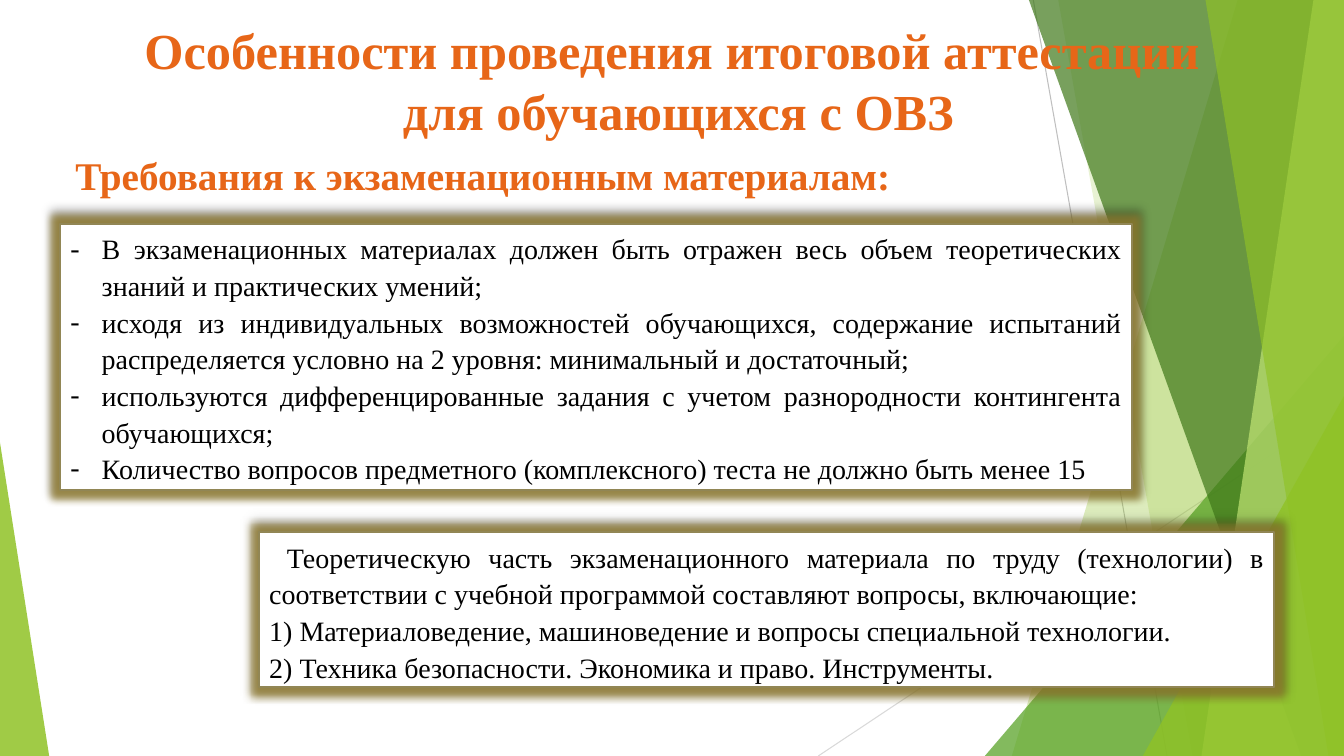
import pptx
import pptx.util
import pptx.dml.color
import pptx.enum.shapes
import pptx.enum.text
import pptx.oxml.ns
import lxml.etree

Cm = pptx.util.Cm
Pt = pptx.util.Pt
ALIGN = pptx.enum.text.PP_ALIGN
WIDTH, HEIGHT = 33.87, 19.05
FONT = "Times New Roman"
ORANGE, BLACK, WHITE, OLIVE, GREEN = "E76618", "000000", "FFFFFF", "918655", "90C226"

HEADING = ["Особенности проведения итоговой аттестации", " для обучающихся с ОВЗ"]
SUBHEADING = ["Требования к экзаменационным материалам:"]
REQUIREMENTS = [
    "В экзаменационных материалах должен быть отражен весь объем теоретических знаний и практических умений;",
    "исходя из индивидуальных возможностей обучающихся, содержание испытаний распределяется условно на 2 уровня: минимальный и достаточный;",
    "используются дифференцированные задания с учетом разнородности контингента обучающихся;",
    "Количество вопросов предметного (комплексного) теста не должно быть менее 15",
]
THEORY = [
    " Теоретическую часть экзаменационного материала по труду (технологии) в соответствии с учебной программой составляют вопросы, включающие:",
    "1) Материаловедение, машиноведение и вопросы специальной технологии.",
    "2) Техника безопасности. Экономика и право. Инструменты.",
]


def color(value):
    return pptx.dml.color.RGBColor.from_string(value)


def add_xml(parent, tag, **values):
    child = lxml.etree.SubElement(parent, pptx.oxml.ns.qn(tag))
    for name, value in values.items():
        child.set(name, str(value))
    return child


def apply_format(target, values):
    for name, value in values.items():
        setattr(target, name, value)


def place(box, left, top, width, height):
    apply_format(box, {"left": Cm(left), "top": Cm(top), "width": Cm(width), "height": Cm(height)})
    box.element.getparent().append(box.element)


def paint(shape, value, opacity):
    shape.shadow.inherit = False
    shape.line.fill.background()
    shape.fill.solid()
    shape.fill.fore_color.rgb = color(value)
    tint = shape.element.spPr.find(".//" + pptx.oxml.ns.qn("a:srgbClr"))
    add_xml(tint, "a:alpha", val=opacity * 1000)


def add_ray(page, start, end, value):
    ray = page.shapes.add_connector(
        pptx.enum.shapes.MSO_CONNECTOR.STRAIGHT, *(Cm(length) for length in start + end))
    ray.line.color.rgb = color(value)
    ray.line.width = Pt(0.75)
    add_xml(ray.element.spPr, "a:effectLst")


def add_band(page, top_left, bottom_left, value, opacity):
    corners = [(WIDTH, 0), (WIDTH, HEIGHT), (bottom_left, HEIGHT)]
    builder = page.shapes.build_freeform(Cm(top_left), 0)
    builder.add_line_segments([(Cm(x), Cm(y)) for x, y in corners], close=True)
    paint(builder.convert_to_shape(), value, opacity)


def add_wedge(page, left, top, width, apex, value, opacity):
    wedge = page.shapes.add_shape(
        pptx.enum.shapes.MSO_SHAPE.ISOSCELES_TRIANGLE,
        Cm(left), Cm(top), Cm(width), Cm(HEIGHT - top))
    wedge.adjustments[0] = apex
    paint(wedge, value, opacity)


def add_facets(page):
    add_ray(page, (26.04, 0), (29.41, HEIGHT), "BFBFBF")
    add_ray(page, (WIDTH, 10.24), (20.62, HEIGHT), "D9D9D9")
    add_band(page, 31.19, 25.5, GREEN, 30)
    add_band(page, 26.67, 30.05, GREEN, 20)
    add_wedge(page, 24.82, 8.46, WIDTH - 24.82, 1, "54A021", 72)
    add_band(page, 25.93, 32.79, "3F7819", 70)
    add_band(page, 33.1, 30.28, "C0E474", 70)
    add_band(page, 30.38, 33.48, GREEN, 65)
    add_wedge(page, 28.8, 9.98, WIDTH - 28.8, 1, GREEN, 80)
    add_wedge(page, 0, 11.15, 1.24, 0, GREEN, 85)


def write(box, lines, frame_values, para_values, font_values, value):
    frame = box.text_frame
    apply_format(frame, {"auto_size": pptx.enum.text.MSO_AUTO_SIZE.NONE, **frame_values})
    for number, line in enumerate(lines):
        para = frame.add_paragraph() if number else frame.paragraphs[0]
        apply_format(para, {"space_before": Pt(0), **para_values})
        span = para.add_run()
        span.text = line
        apply_format(span.font, {"name": FONT, **font_values})
        span.font.color.rgb = color(value)


def add_heading(box, lines, size, area):
    place(box, *area)
    write(box, lines,
          {"word_wrap": False, "vertical_anchor": pptx.enum.text.MSO_ANCHOR.TOP},
          {"alignment": ALIGN.CENTER}, {"size": Pt(size), "bold": True}, ORANGE)


def add_glow(box):
    box.shadow.inherit = False
    effects = box.element.spPr.find(pptx.oxml.ns.qn("a:effectLst"))
    glow = add_xml(effects, "a:glow", rad=Pt(11))
    add_xml(add_xml(glow, "a:srgbClr", val="8F7A2E"), "a:alpha", val=80000)
    shade = add_xml(effects, "a:outerShdw", blurRad=Pt(4), dist=Pt(3), dir=270 * 60000)
    add_xml(add_xml(shade, "a:srgbClr", val=BLACK), "a:alpha", val=40000)


def add_panel(box, lines, dashed, area):
    place(box, *area)
    box.fill.solid()
    box.fill.fore_color.rgb = color(WHITE)
    box.line.color.rgb = color(OLIVE)
    box.line.width = Pt(1.5)
    add_glow(box)
    write(box, lines,
          {"word_wrap": True, "vertical_anchor": pptx.enum.text.MSO_ANCHOR.TOP},
          {"alignment": ALIGN.JUSTIFY, "line_spacing": 1.09}, {"size": Pt(20)}, BLACK)
    indent = Cm(0.79) if dashed else 0
    for para in box.text_frame.paragraphs:
        layout = para._p.get_or_add_pPr()
        layout.set("marL", str(indent))
        layout.set("indent", str(-indent))
        if dashed:
            add_xml(layout, "a:buFont", typeface=FONT)
            add_xml(layout, "a:buChar", char="-")
        else:
            add_xml(layout, "a:buNone")


def main():
    deck = pptx.Presentation()
    deck.slide_width, deck.slide_height = Cm(WIDTH), Cm(HEIGHT)
    page = deck.slides.add_slide(deck.slide_layouts[3])
    add_facets(page)
    add_heading(page.shapes.title, HEADING, 36, (3.25, 0.36, 27.38, 3.33))
    subheading = page.shapes.add_textbox(0, 0, 0, 0)
    add_heading(subheading, SUBHEADING, 28, (1.52, 3.68, 21.29, 1.45))
    add_panel(page.placeholders[1], REQUIREMENTS, True, (1.52, 5.64, 27, 6.71))
    add_panel(page.placeholders[2], THEORY, False, (6.53, 13.41, 25.58, 3.91))
    deck.save("out.pptx")


if __name__ == "__main__":
    main()
